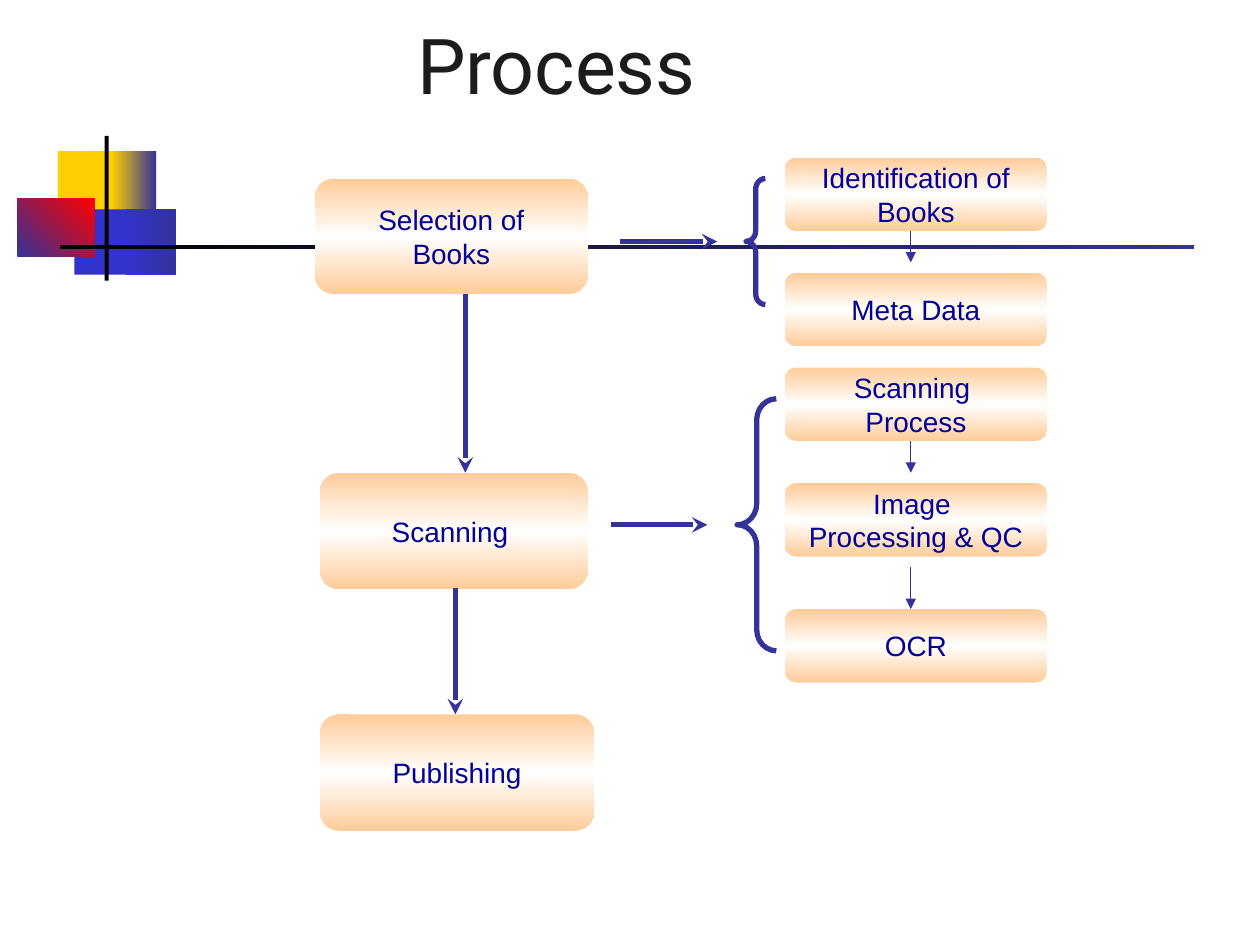
from dataclasses import dataclass

from lxml import etree
from pptx import Presentation
from pptx.dml.color import RGBColor
from pptx.enum.shapes import MSO_CONNECTOR, MSO_SHAPE
from pptx.enum.text import MSO_ANCHOR, PP_ALIGN
from pptx.oxml.ns import qn
from pptx.util import Cm, Pt

RECT = MSO_SHAPE.RECTANGLE
ROUNDED = MSO_SHAPE.ROUNDED_RECTANGLE
BRACE = MSO_SHAPE.LEFT_BRACE
STRAIGHT = MSO_CONNECTOR.STRAIGHT
CENTER = PP_ALIGN.CENTER
MIDDLE, BOTTOM = MSO_ANCHOR.MIDDLE, MSO_ANCHOR.BOTTOM

COLORS = {
    "background": "FFFFFF",
    "title": "1C1C1C",
    "label": "000099",
    "line": "333399",
    "peach": "FFCC99",
    "white": "FFFFFF",
    "yellow": "FFCF01",
    "blue": "3333CC",
    "red": "FF0000",
    "black": "000000",
}

DETAIL_LEFT, DETAIL_WIDTH, DETAIL_HEIGHT = 15.82, 5.29, 1.48
DETAIL_ARROW_X = 18.36


@dataclass(frozen=True)
class Area:
    """A rectangle in centimetres."""
    left: float
    top: float
    width: float
    height: float


@dataclass(frozen=True)
class Block:
    """A filled bar or square of the decoration; several colours make a gradient."""
    area: Area
    colors: tuple[str, ...]
    angle: int = 0


@dataclass(frozen=True)
class Step:
    label: str
    area: Area


@dataclass(frozen=True)
class Arrow:
    """An arrow between two points in centimetres."""
    x1: float
    y1: float
    x2: float
    y2: float
    weight: float = 3
    head: str = "stealth"


@dataclass(frozen=True)
class Brace:
    area: Area
    curve: float


def detail(label: str, top: float) -> Step:
    return Step(label, Area(DETAIL_LEFT, top, DETAIL_WIDTH, DETAIL_HEIGHT))


def detail_arrow(top: float, bottom: float) -> Arrow:
    return Arrow(DETAIL_ARROW_X, top, DETAIL_ARROW_X, bottom, 0.75, "triangle")


DECORATION = [
    Block(Area(1.17, 3.05, 1.22, 1.32), ("yellow",)),
    Block(Area(2.24, 3.05, 0.91, 1.32), ("yellow", "line")),
    Block(Area(1.5, 4.22, 1.17, 1.32), ("blue",)),
    Block(Area(2.54, 4.22, 1.02, 1.32), ("blue", "line")),
    Block(Area(0.35, 4.01, 1.55, 1.17), ("line", "red"), 315),
    Block(Area(2.11, 2.74, 0.08, 2.92), ("black",)),
    Block(Area(1.22, 4.94, 22.86, 0.09), ("black", "line")),
]
STEPS = [
    Step("Selection of\nBooks", Area(6.35, 3.6, 5.5, 2.33)),
    Step("Scanning ", Area(6.45, 9.53, 5.4, 2.35)),
    Step("Publishing", Area(6.45, 14.4, 5.53, 2.35)),
    detail("Identification of\nBooks", 3.18),
    detail("Meta Data", 5.5),
    detail("Scanning \nProcess", 7.41),
    detail("Image \nProcessing & QC", 9.74),
    detail("OCR", 12.28),
]
ARROWS = [
    Arrow(9.38, 5.93, 9.38, 9.53),
    Arrow(9.18, 11.85, 9.18, 14.4),
    Arrow(12.5, 4.87, 14.46, 4.87),
    Arrow(12.31, 10.58, 14.26, 10.58),
    detail_arrow(4.66, 5.29),
    detail_arrow(8.89, 9.53),
    detail_arrow(11.43, 12.28),
]
BRACES = [
    Brace(Area(15.04, 3.6, 0.39, 2.54), 0.545),
    Brace(Area(14.86, 8.04, 0.79, 5.08), 0.539),
]


def rgb(name: str) -> RGBColor:
    return RGBColor.from_string(COLORS[name])


def add_preset(slide, preset, area: Area):
    shape = slide.shapes.add_shape(
        preset, Cm(area.left), Cm(area.top), Cm(area.width), Cm(area.height))
    shape.shadow.inherit = False
    return shape


def fill_shape(shape, colors: tuple[str, ...], angle: int = 0) -> None:
    """Fill with one colour or with evenly spaced stops; angle runs clockwise."""
    shape.line.fill.background()
    if len(colors) == 1:
        shape.fill.solid()
        shape.fill.fore_color.rgb = rgb(colors[0])
        return
    shape.fill.gradient()
    shape.fill.gradient_angle = (360 - angle) % 360
    stops = shape.fill._fill._gradFill.find(qn("a:gsLst"))
    for stop in list(stops):
        stops.remove(stop)
    for index, name in enumerate(colors):
        position = 100000 * index // (len(colors) - 1)
        stop = etree.SubElement(stops, qn("a:gs"), pos=str(position))
        etree.SubElement(stop, qn("a:srgbClr"), val=COLORS[name])


def draw_block(slide, block: Block) -> None:
    fill_shape(add_preset(slide, RECT, block.area), block.colors, block.angle)


def draw_step(slide, step: Step) -> None:
    box = add_preset(slide, ROUNDED, step.area)
    fill_shape(box, ("peach", "white", "peach"), 90)
    frame = box.text_frame
    frame.word_wrap = False
    frame.vertical_anchor = MIDDLE
    frame.text = step.label
    for paragraph in frame.paragraphs:
        paragraph.alignment = CENTER
        paragraph.font.name = "Arial"
        paragraph.font.size = Pt(16)
        paragraph.font.color.rgb = rgb("label")


def draw_arrow(slide, arrow: Arrow) -> None:
    connector = slide.shapes.add_connector(
        STRAIGHT, Cm(arrow.x1), Cm(arrow.y1), Cm(arrow.x2), Cm(arrow.y2))
    connector.line.color.rgb = rgb("line")
    connector.line.width = Pt(arrow.weight)
    etree.SubElement(connector.line._get_or_add_ln(), qn("a:tailEnd"), type=arrow.head)
    etree.SubElement(connector._element.spPr, qn("a:effectLst"))


def draw_brace(slide, brace: Brace) -> None:
    shape = add_preset(slide, BRACE, brace.area)
    shape.adjustments[0] = brace.curve
    shape.fill.background()
    shape.line.color.rgb = rgb("line")
    shape.line.width = Pt(3)


def draw_title(slide) -> None:
    frame = slide.shapes.add_textbox(Cm(2.11), Cm(0), Cm(21.59), Cm(2.34)).text_frame
    frame.word_wrap = True
    frame.vertical_anchor = BOTTOM
    frame.margin_left = Cm(6.3)
    frame.text = "Process"
    font = frame.paragraphs[0].font
    font.name = "Roboto"
    font.size = Pt(44)
    font.color.rgb = rgb("title")


def main() -> None:
    deck = Presentation()
    deck.slide_width, deck.slide_height = Cm(25.4), Cm(19.05)
    slide = deck.slides.add_slide(deck.slide_layouts[6])
    slide.background.fill.solid()
    slide.background.fill.fore_color.rgb = rgb("background")
    for draw, items in ((draw_block, DECORATION), (draw_step, STEPS),
                        (draw_arrow, ARROWS), (draw_brace, BRACES)):
        for item in items:
            draw(slide, item)
    draw_title(slide)
    deck.save("out.pptx")


if __name__ == "__main__":
    main()
